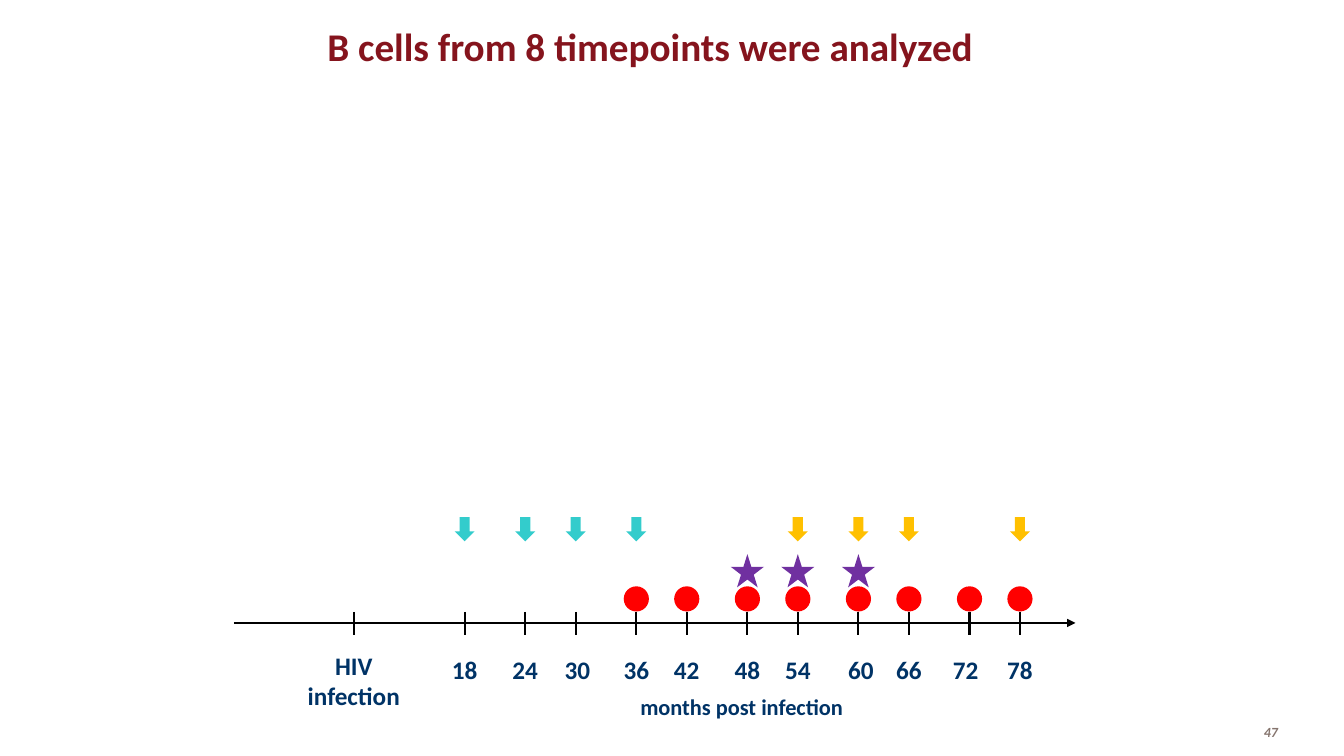
import pptx
import pptx.util
import pptx.dml.color
import pptx.enum.shapes
import pptx.enum.text
import pptx.oxml.ns
import lxml.etree

Pt = pptx.util.Pt
SHAPE = pptx.enum.shapes.MSO_SHAPE
ALIGN = pptx.enum.text.PP_ALIGN
ANCHOR = pptx.enum.text.MSO_ANCHOR

COLORS = {
    "title": "85141D",
    "label": "003366",
    "page": "85746D",
    "axis": "000000",
    "early": "33CCCC",
    "late": "FFC000",
    "star": "7030A0",
    "dot": "FF0000",
}
FONT = "Calibri"

MONTHS = range(18, 79, 6)
FIRST_MONTH_X = 96.9 + 68
YEAR_STEP = 79.33
HALF_YEAR_STEP = 43.3
INFECTION_X = 85.7
LABEL_NUDGE = {30: 1.2, 60: 1.8, 72: -2.7}

MARKERS = [
    (SHAPE.DOWN_ARROW, "early", 14.4, 17.3, 8.6, [18, 24, 30, 36]),
    (SHAPE.DOWN_ARROW, "late", 14.4, 17.3, 8.6, [54, 60, 66, 78]),
    (SHAPE.STAR_5_POINT, "star", 23.8, 23.8, 35, [48, 54, 60]),
    (SHAPE.OVAL, "dot", 18, 18, 58, [36, 42, 48, 54, 60, 66, 72, 78]),
]


def color(name):
    return pptx.dml.color.RGBColor.from_string(COLORS[name])


def add_text(slide, box, lines, size, color_name, align=ALIGN.CENTER,
             anchor=ANCHOR.TOP, wrap=False, italic=False):
    left, top, width, height = box
    frame = slide.shapes.add_textbox(Pt(left), Pt(top), Pt(width), Pt(height)).text_frame
    frame.word_wrap = wrap
    frame.vertical_anchor = anchor
    for index, line in enumerate(lines):
        paragraph = frame.paragraphs[0] if index == 0 else frame.add_paragraph()
        paragraph.alignment = align
        run = paragraph.add_run()
        run.text = line
        run.font.name = FONT
        run.font.size = Pt(size)
        run.font.bold = True
        run.font.italic = italic
        run.font.color.rgb = color(color_name)
    return frame


def add_line(slide, x1, y1, x2, y2, arrow=False):
    line = slide.shapes.add_connector(
        pptx.enum.shapes.MSO_CONNECTOR.STRAIGHT, Pt(x1), Pt(y1), Pt(x2), Pt(y2))
    line.line.color.rgb = color("axis")
    line.line.width = Pt(1.5)
    qn = pptx.oxml.ns.qn
    properties = line._element.spPr
    if arrow:
        lxml.etree.SubElement(properties.find(qn("a:ln")), qn("a:tailEnd"), type="triangle")
    lxml.etree.SubElement(properties, qn("a:effectLst"))


def add_marker(slide, kind, color_name, center_x, top, width, height):
    marker = slide.shapes.add_shape(
        kind, Pt(center_x - width / 2), Pt(top), Pt(width), Pt(height))
    marker.shadow.inherit = False
    marker.fill.solid()
    marker.fill.fore_color.rgb = color(color_name)
    marker.line.fill.background()


def add_title(slide, box):
    frame = add_text(slide, box, ["B cells from 8 timepoints were analyzed"],
                     28, "title", wrap=True)
    frame.margin_top = Pt(5)
    frame.paragraphs[0].line_spacing = 0.9


def add_page_number(slide, box):
    add_text(slide, box, ["47"], 10, "page", align=ALIGN.LEFT,
             anchor=ANCHOR.MIDDLE, wrap=True, italic=True)


def add_timeline(slide, box):
    left, top, width, height = box
    axis_y = top + 84.2
    month_x = {
        month: left + FIRST_MONTH_X + YEAR_STEP * (i // 2) + HALF_YEAR_STEP * (i % 2)
        for i, month in enumerate(MONTHS)
    }
    infection_x = left + INFECTION_X

    add_line(slide, left, axis_y, left + width, axis_y, arrow=True)
    for x in [infection_x, *month_x.values()]:
        add_line(slide, x, axis_y - 8, x, axis_y + 8.6)

    add_text(slide, (infection_x - 40.3, top + 100, 80.6, 51),
             ["HIV", "infection"], 18, "label")
    for month, x in month_x.items():
        center = x + LABEL_NUDGE.get(month, 0)
        add_text(slide, (center - 16.5, top + 102.9, 33, 29), [str(month)], 18, "label")
    add_text(slide, (left + 282.2, top + 131, 161.3, 26.6),
             ["months post infection"], 16, "label")

    for kind, color_name, wide, tall, offset, months in MARKERS:
        for month in months:
            add_marker(slide, kind, color_name, month_x[month], top + offset, wide, tall)


def main():
    deck = pptx.Presentation()
    deck.slide_width, deck.slide_height = Pt(960), Pt(540)
    slide = deck.slides.add_slide(deck.slide_layouts[6])
    add_page_number(slide, (895.7, 514, 45.4, 17.3))
    add_timeline(slide, (167, 360.8, 601.2, 158))
    add_title(slide, (154, 15.1, 620.6, 44))
    deck.save("out.pptx")


if __name__ == "__main__":
    main()
